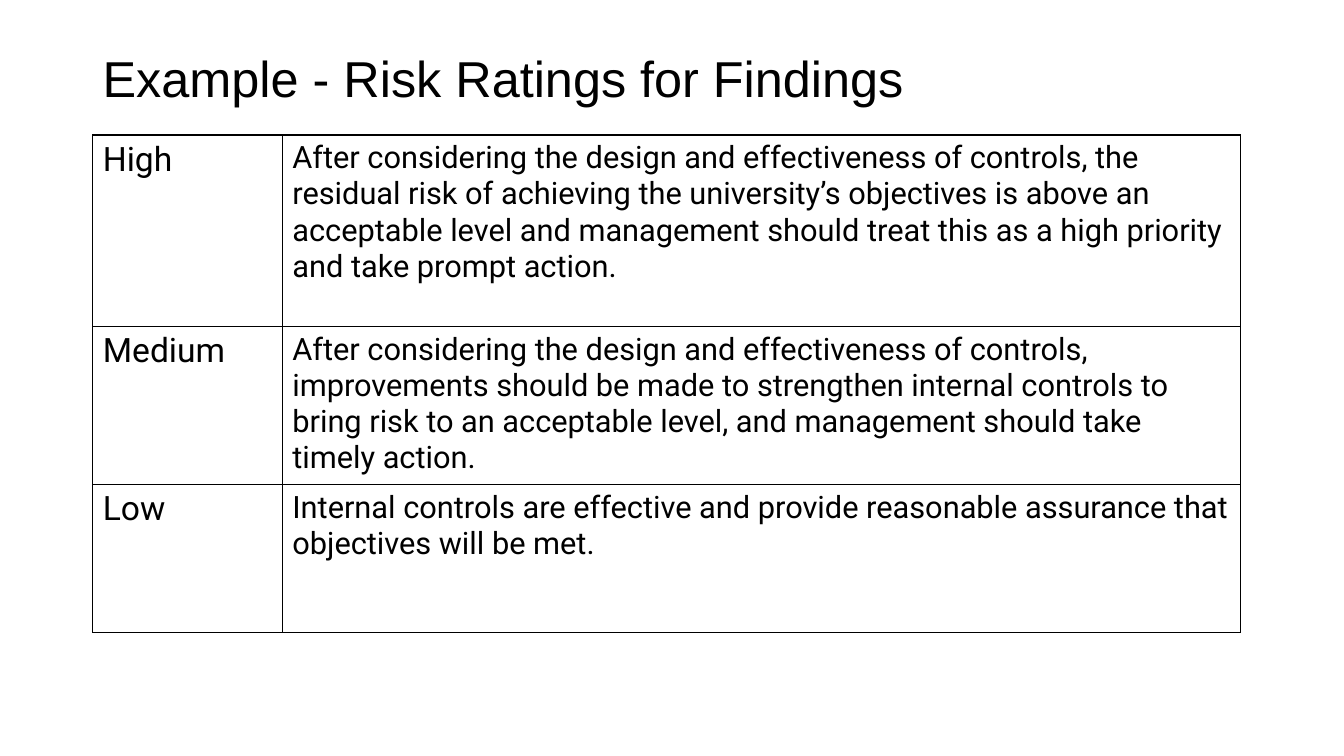
from lxml.etree import SubElement
from pptx import Presentation
from pptx.dml.color import RGBColor
from pptx.enum.text import MSO_ANCHOR
from pptx.oxml.ns import qn
from pptx.util import Inches, Pt

BLACK = RGBColor(0, 0, 0)
WHITE = RGBColor(255, 255, 255)
TITLE_FORMAT = {"name": "Arial", "size": Pt(36)}
RATING_FORMAT = {"name": "Roboto", "size": Pt(24), "bold": False}
MEANING_FORMAT = {**RATING_FORMAT, "size": Pt(22)}
COLUMN_WIDTHS = [1.88, 9.5]
ROW_HEIGHTS = [1.9, 1.54, 1.47]
RISK_RATINGS = [
    ("High", "After considering the design and effectiveness of controls, the residual risk "
             "of achieving the university’s objectives is above an acceptable level and "
             "management should treat this as a high priority and take prompt action."),
    ("Medium", "After considering the design and effectiveness of controls, improvements "
               "should be made to strengthen internal controls to bring risk to an "
               "acceptable level, and management should take timely action."),
    ("Low", "Internal controls are effective and provide reasonable assurance that "
            "objectives will be met."),
]


def write_text(frame, text, font_format):
    """Write one formatted black paragraph into a text frame."""
    para = frame.paragraphs[0]
    span = para.add_run()
    span.text = text
    for name, value in font_format.items():
        setattr(span.font, name, value)
    span.font.color.rgb = BLACK
    return para


def add_title(page, text):
    """Add the slide heading."""
    box = page.shapes.add_textbox(Inches(0.92), Inches(0.4), Inches(11.5), Inches(0.81))
    box.text_frame.word_wrap = True
    box.text_frame.vertical_anchor = MSO_ANCHOR.MIDDLE
    write_text(box.text_frame, text, TITLE_FORMAT).line_spacing = 0.9


def add_borders(cell):
    """Draw a thin black line on all four sides of a cell."""
    properties = cell._tc.get_or_add_tcPr()
    for side in ("lnL", "lnR", "lnT", "lnB"):
        line = SubElement(properties, qn(f"a:{side}"), w=str(Pt(1)))
        fill = SubElement(line, qn("a:solidFill"))
        SubElement(fill, qn("a:srgbClr"), val=str(BLACK))


def format_cell(cell, text, font_format):
    """Fill one cell with text, borders and a white background."""
    write_text(cell.text_frame, text, font_format)
    add_borders(cell)
    cell.fill.solid()
    cell.fill.fore_color.rgb = WHITE


def add_ratings_table(page, ratings):
    """Add the table of ratings and their meanings."""
    table = page.shapes.add_table(
        len(ratings), len(COLUMN_WIDTHS), Inches(0.92), Inches(1.34),
        Inches(sum(COLUMN_WIDTHS)), Inches(sum(ROW_HEIGHTS))).table
    table.first_row = False
    table.horz_banding = False
    for column, width in zip(table.columns, COLUMN_WIDTHS):
        column.width = Inches(width)
    for row, height, texts in zip(table.rows, ROW_HEIGHTS, ratings):
        row.height = Inches(height)
        for cell, text, font_format in zip(row.cells, texts, (RATING_FORMAT, MEANING_FORMAT)):
            format_cell(cell, text, font_format)


def main():
    """Build and save the slide."""
    deck = Presentation()
    deck.slide_width = Inches(13.33)
    deck.slide_height = Inches(7.5)
    page = deck.slides.add_slide(deck.slide_layouts[6])
    add_title(page, "Example - Risk Ratings for Findings")
    add_ratings_table(page, RISK_RATINGS)
    deck.save("out.pptx")


if __name__ == "__main__":
    main()
